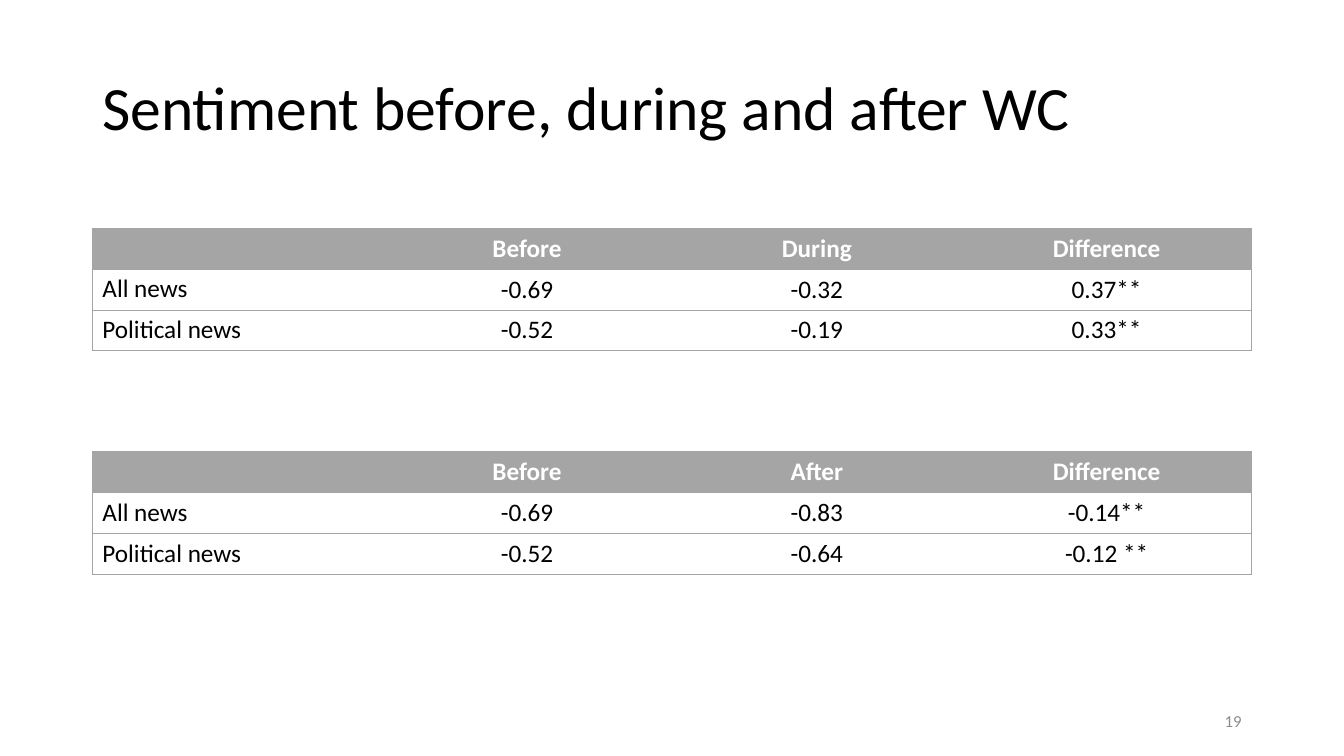
from lxml import etree
from pptx import Presentation
from pptx.dml.color import RGBColor
from pptx.enum.text import MSO_ANCHOR, PP_ALIGN
from pptx.oxml.ns import qn
from pptx.util import Pt

GREY = "A5A5A5"


def write(tf, text, size, color, align=PP_ALIGN.LEFT, bold=False):
    p = tf.paragraphs[0]
    p.text = text
    p.alignment = align
    p.font.name = "Calibri"
    p.font.size = Pt(size)
    p.font.bold = bold
    p.font.color.rgb = RGBColor.from_string(color)
    return p


def set_borders(cell, sides):
    tcPr = cell._tc.get_or_add_tcPr()
    for side in "LRTB":
        ln = etree.SubElement(tcPr, qn(f"a:ln{side}"), w=str(Pt(0.5)))
        if side in sides:
            fill = etree.SubElement(ln, qn("a:solidFill"))
            etree.SubElement(fill, qn("a:srgbClr"), val=GREY)
        else:
            etree.SubElement(ln, qn("a:noFill"))


prs = Presentation()
prs.slide_width, prs.slide_height = Pt(960), Pt(540)
s = prs.slides.add_slide(prs.slide_layouts[6])

# Title and slide number
texts = [
    ("Sentiment before, during and after WC", 66, 26.6, 828, 104.4, 44, "000000", PP_ALIGN.LEFT),
    ("19", 678, 500.5, 216, 28.8, 12, "8C8C8C", PP_ALIGN.RIGHT),
]
for text, x, y, w, h, size, color, align in texts:
    tf = s.shapes.add_textbox(Pt(x), Pt(y), Pt(w), Pt(h)).text_frame
    tf.word_wrap = True
    tf.vertical_anchor = MSO_ANCHOR.MIDDLE
    p = write(tf, text, size, color, align)
    if size == 44:
        p.line_spacing = 0.9

# Sentiment tables: top, vertical anchor of the figures, rows
tables = [
    (162.9, MSO_ANCHOR.MIDDLE, [
        ["", "Before", "During", "Difference"],
        ["All news", "-0.69", "-0.32", "0.37**"],
        ["Political news", "-0.52", "-0.19", "0.33**"],
    ]),
    (322.3, MSO_ANCHOR.TOP, [
        ["", "Before", "After", "Difference"],
        ["All news", "-0.69", "-0.83", "-0.14**"],
        ["Political news", "-0.52", "-0.64", "-0.12 **"],
    ]),
]
for top, anchor, rows in tables:
    tbl = s.shapes.add_table(3, 4, Pt(66), Pt(top), Pt(828), Pt(87.6)).table
    tbl.horz_banding = False
    for i, row in enumerate(rows):
        for j, text in enumerate(row):
            cell = tbl.cell(i, j)
            header = i == 0
            # Outer frame plus a rule between rows
            set_borders(cell, "TB" + {0: "L", 3: "R"}.get(j, ""))
            if header:
                cell.fill.solid()
                cell.fill.fore_color.rgb = RGBColor.from_string(GREY)
            else:
                cell.fill.background()
            cell.vertical_anchor = anchor if j else MSO_ANCHOR.TOP
            write(cell.text_frame, text, 18, "FFFFFF" if header else "000000",
                  PP_ALIGN.CENTER if j else PP_ALIGN.LEFT, header)

prs.save("out.pptx")
